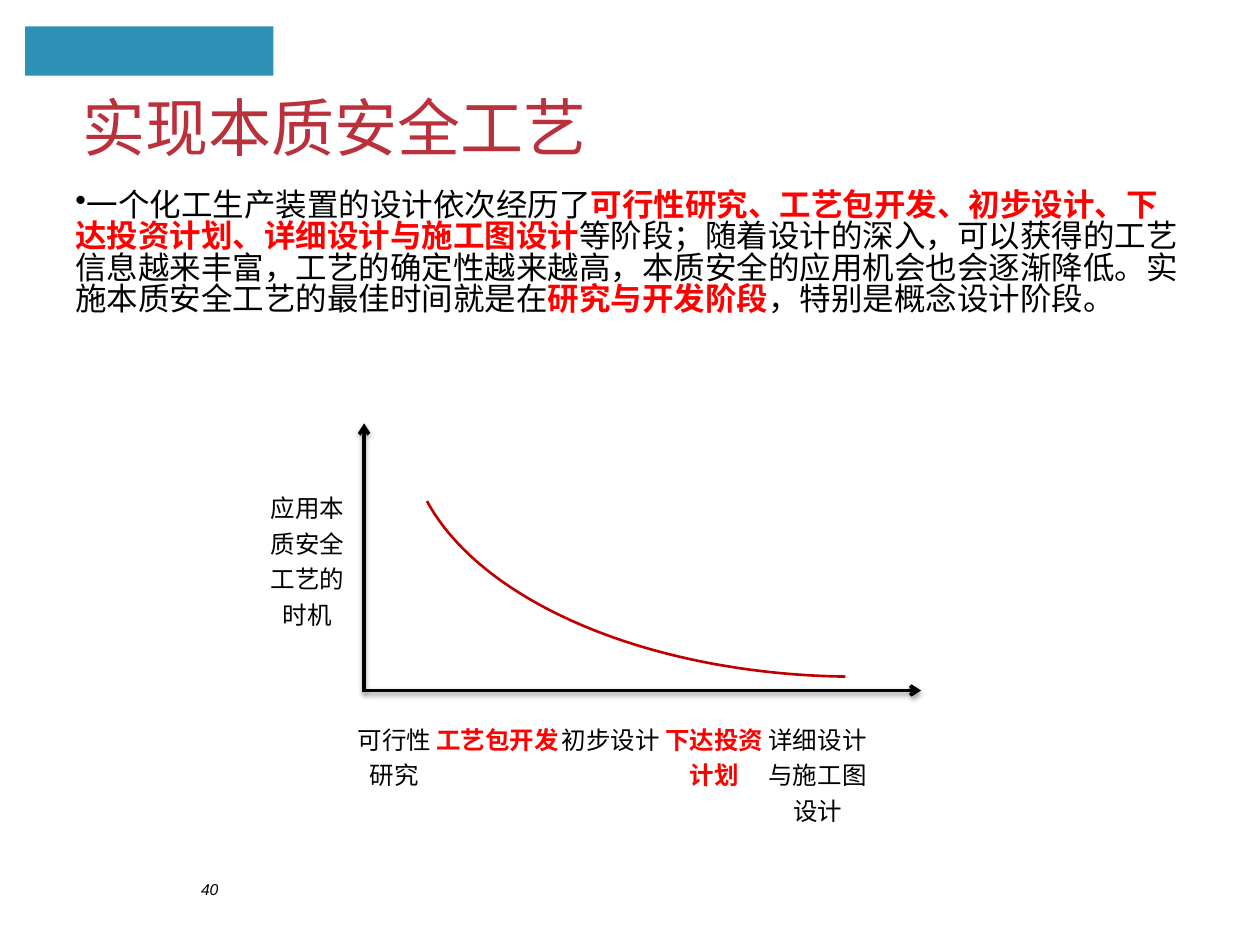
from dataclasses import dataclass

import lxml.etree
import pptx
import pptx.dml.color
import pptx.enum.shapes
import pptx.enum.text
import pptx.oxml
import pptx.oxml.ns
import pptx.util

Inches, Pt = pptx.util.Inches, pptx.util.Pt
RGB = pptx.dml.color.RGBColor
qn = pptx.oxml.ns.qn
SHAPE = pptx.enum.shapes.MSO_SHAPE
CENTER = pptx.enum.text.PP_ALIGN.CENTER
ANCHOR = pptx.enum.text.MSO_ANCHOR


@dataclass(frozen=True)
class Theme:
    cjk: str = "Noto Sans CJK SC"
    latin: str = "Arial"
    text: str = "000000"
    title: str = "BA313B"
    accent: str = "FF0000"
    banner: str = "2F90B5"
    curve: str = "C00000"
    title_size: float = 36
    body_size: float = 18
    label_size: float = 14
    number_size: float = 9


@dataclass(frozen=True)
class Span:
    text: str
    key: bool = False


@dataclass(frozen=True)
class Axis:
    start: tuple[float, float]
    end: tuple[float, float]


THEME = Theme()

BODY = [
    Span("一个化工生产装置的设计依次经历了"),
    Span("可行性研究、工艺包开发、初步设计、下达投资计划、详细设计与施工图设计", True),
    Span("等阶段；随着设计的深入，可以获得的工艺信息越来丰富，工艺的确定性越来越高，"
         "本质安全的应用机会也会逐渐降低。实施本质安全工艺的最佳时间就是在"),
    Span("研究与开发阶段", True),
    Span("，特别是概念设计阶段。"),
]
STAGES = [
    Span("可行性研究"),
    Span("工艺包开发", True),
    Span("初步设计"),
    Span("下达投资计划", True),
    Span("详细设计与施工图设计"),
]
AXES = [
    Axis((2.89, 5.48), (7.31, 5.48)),
    Axis((2.89, 5.49), (2.89, 3.36)),
]
COLUMNS = [0.72, 0.66, 0.98, 0.82, 0.82, 0.82, 0.64]
ROWS = [0.21] * 10 + [1.5]


def add_run(p, text: str, size: float, color: str, font: str = THEME.cjk, bold: bool = False):
    r = p.add_run()
    r.text = text
    r.font.size = Pt(size)
    r.font.bold = bold
    r.font.name = font
    r.font.color.rgb = RGB.from_string(color)
    ea = lxml.etree.SubElement(r.font._element, qn("a:ea"))
    ea.set("typeface", font)
    return r


def add_span(p, span: Span, size: float) -> None:
    add_run(p, span.text, size, THEME.accent if span.key else THEME.text, bold=span.key)


def add_text_box(s, left: float, top: float, width: float, height: float):
    tf = s.shapes.add_textbox(Inches(left), Inches(top), Inches(width), Inches(height)).text_frame
    tf.word_wrap = True
    return tf.paragraphs[0]


def add_bullet(p) -> None:
    pPr = p._p.get_or_add_pPr()
    pPr.set("marL", "0")
    pPr.set("indent", "0")
    lxml.etree.SubElement(pPr, qn("a:buChar")).set("char", "•")


def fill_cell(cell, span: Span, top: float) -> None:
    cell.margin_top = Inches(top)
    p = cell.text_frame.paragraphs[0]
    p.alignment = CENTER
    add_span(p, span, THEME.label_size)


def add_label_table(s) -> None:
    table = s.shapes.add_table(len(ROWS), len(COLUMNS), Inches(2.08), Inches(3.43),
                               Inches(sum(COLUMNS)), Inches(sum(ROWS))).table
    table.first_row = table.horz_banding = False
    for column, width in zip(table.columns, COLUMNS):
        column.width = Inches(width)
    for row, height in zip(table.rows, ROWS):
        row.height = Inches(height)
    for cell in table.iter_cells():
        cell.fill.background()
        cell.margin_left = cell.margin_right = cell.margin_top = cell.margin_bottom = 0
        # Small paragraph marks keep the empty rows at their set height
        mark = lxml.etree.SubElement(cell.text_frame.paragraphs[0]._p, qn("a:endParaRPr"))
        mark.set("sz", "800")
    table.cell(2, 0).merge(table.cell(8, 0))
    fill_cell(table.cell(2, 0), Span("应用本质安全工艺的时机"), 0.03)
    for col, stage in enumerate(STAGES, 1):
        fill_cell(table.cell(len(ROWS) - 1, col), stage, 0.19)


def add_axis(s, axis: Axis) -> None:
    line = s.shapes.add_connector(pptx.enum.shapes.MSO_CONNECTOR.STRAIGHT,
                                  *map(Inches, axis.start + axis.end))
    line.line.width = Pt(2)
    line.line.color.rgb = RGB.from_string(THEME.text)
    ln = line.line._get_or_add_ln()
    lxml.etree.SubElement(ln, qn("a:tailEnd")).set("type", "arrow")
    ns = pptx.oxml.ns.nsdecls("a")
    line._element.spPr.append(pptx.oxml.parse_xml(
        f'<a:effectLst {ns}><a:outerShdw blurRad="{Pt(3.1)}" dist="{Pt(1.6)}" dir="5400000" '
        f'rotWithShape="0"><a:srgbClr val="{THEME.text}"><a:alpha val="38000"/></a:srgbClr>'
        '</a:outerShdw></a:effectLst>'))


def add_shape(s, kind, left: float, top: float, width: float, height: float):
    sp = s.shapes.add_shape(kind, Inches(left), Inches(top), Inches(width), Inches(height))
    sp.shadow.inherit = False
    return sp


def main() -> None:
    prs = pptx.Presentation()
    prs.slide_width, prs.slide_height = Inches(10), Inches(7.5)
    s = prs.slides.add_slide(prs.slide_layouts[5])

    # Banner
    banner = add_shape(s, SHAPE.RECTANGLE, 0.2, 0.21, 1.97, 0.39)
    banner.fill.solid()
    banner.fill.fore_color.rgb = RGB.from_string(THEME.banner)
    banner.line.fill.background()

    # Title
    title = s.shapes.title
    title.left, title.top, title.width, title.height = map(Inches, (0.5, 0.67, 4.31, 0.66))
    title.text_frame.vertical_anchor = ANCHOR.MIDDLE
    p = title.text_frame.paragraphs[0]
    p.alignment = CENTER
    add_run(p, "实现本质安全工艺", THEME.title_size, THEME.title)

    # Body paragraph
    p = add_text_box(s, 0.5, 1.47, 9, 1.6)
    p.line_spacing = 0.83
    add_bullet(p)
    for span in BODY:
        add_span(p, span, THEME.body_size)

    # Slide number
    p = add_text_box(s, 0.5, 6.93, 2.33, 0.52)
    p.alignment = CENTER
    add_run(p, "40", THEME.number_size, THEME.text, THEME.latin).font.italic = True

    # Diagram: labels, axes and falling curve
    add_label_table(s)
    for axis in AXES:
        add_axis(s, axis)
    curve = add_shape(s, SHAPE.ARC, 3.24, 1.47, 7.11, 3.9)
    curve.rotation = 180
    curve.adjustments[0], curve.adjustments[1] = 163.52, 210.43
    curve.fill.background()
    curve.line.color.rgb = RGB.from_string(THEME.curve)
    curve.line.width = Pt(1.5)

    prs.save("out.pptx")


if __name__ == "__main__":
    main()
